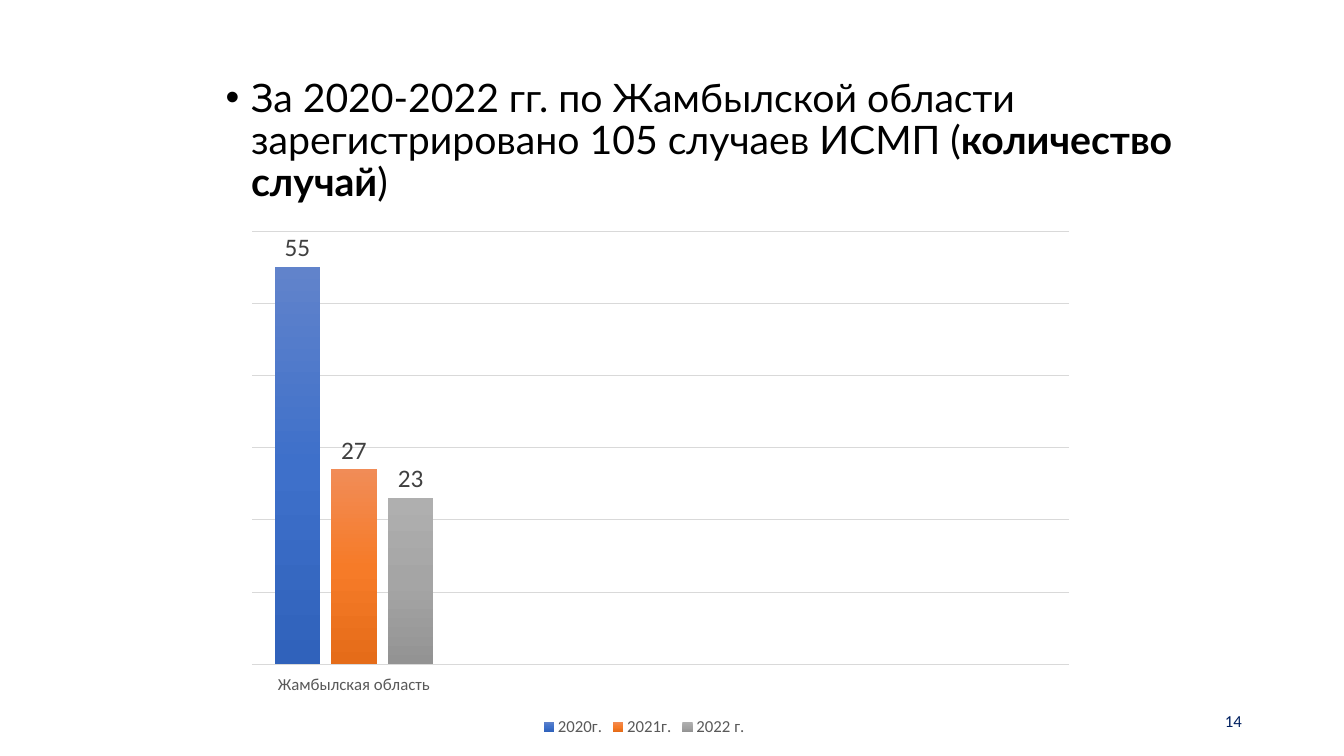
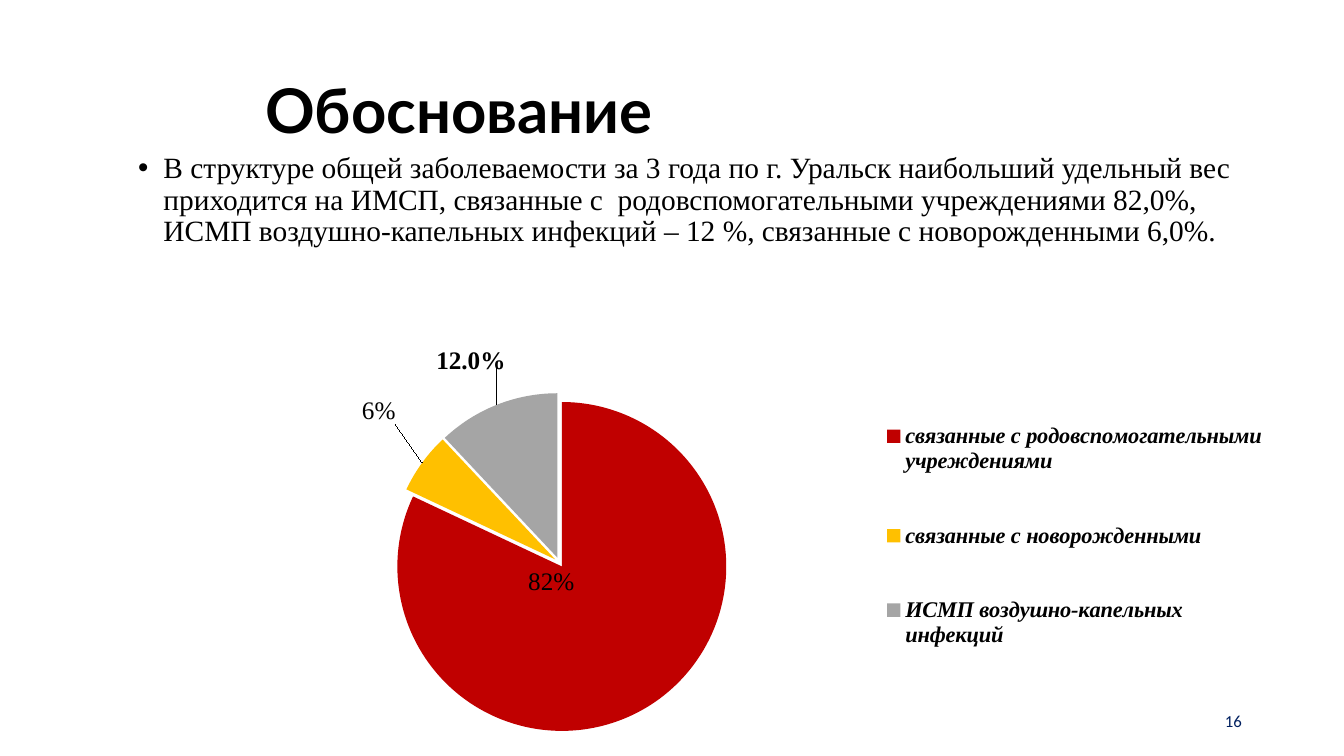
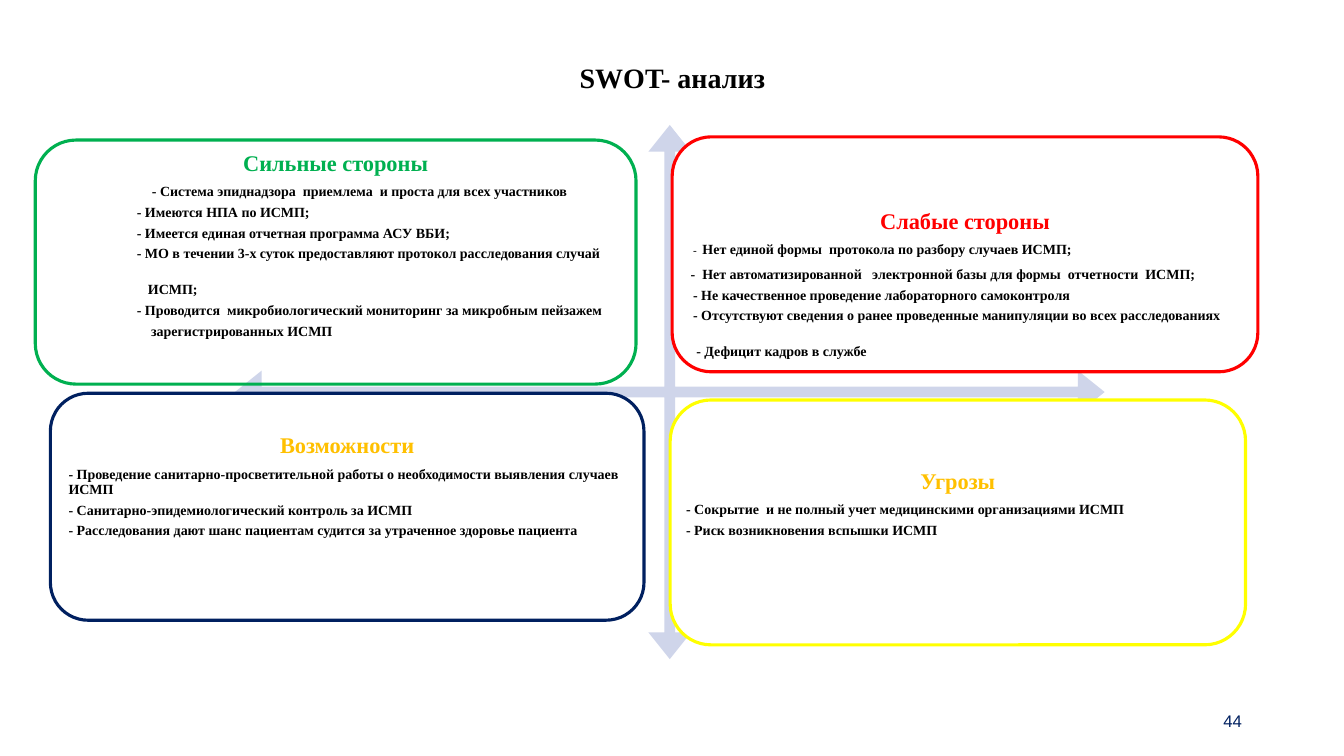
"""Build three slides on hospital infections: a column chart, a pie chart and a SWOT grid."""
from pptx import Presentation
from pptx.chart.data import CategoryChartData
from pptx.dml.color import RGBColor
from pptx.enum.chart import XL_CHART_TYPE as ChartType, XL_LABEL_POSITION as LabelPos
from pptx.enum.chart import XL_LEGEND_POSITION as LegendPos, XL_TICK_LABEL_POSITION as TickLabel
from pptx.enum.chart import XL_TICK_MARK as TickMark
from pptx.enum.shapes import MSO_SHAPE as Preset
from pptx.enum.text import MSO_ANCHOR as Anchor, PP_ALIGN as Align
from pptx.oxml import parse_xml
from pptx.oxml.ns import nsdecls, qn
from pptx.util import Cm, Pt

COLORS = {
    "black": "000000", "navy": "002060", "green": "00B050", "red": "FF0000",
    "yellow": "FFFF00", "amber": "FFC000", "crimson": "C00000", "grey": "A5A5A5",
    "white": "FFFFFF", "arrow": "CFD5EA", "grid": "D9D9D9", "axis": "595959", "label": "404040",
}
LATO, SERIF, CALIBRI, ARIAL = "Lato", "Times New Roman", "Calibri", "Arial"

CASES_TEXT = [
    ("За 2020-2022 гг. по Жамбылской области зарегистрировано 105 случаев ИСМП (", False),
    ("количество случай", True),
    (")", False),
]
REGIONS = ["Жамбылская область", "", "", ""]
YEARS = [
    ("2020г.", 55, ("6183CB", "3E70CA", "3062BB")),
    ("2021г.", 27, ("F18C57", "F67B28", "E56C19")),
    ("2022 г.", 23, ("AFAFAF", "A5A5A5", "939393")),
]

STRUCTURE_TEXT = [(
    "В структуре общей заболеваемости за 3 года по г. Уральск наибольший удельный вес "
    "приходится на ИМСП, связанные с  родовспомогательными учреждениями 82,0%, "
    "ИСМП воздушно-капельных инфекций – 12 %, связанные с новорожденными 6,0%.", False)]
SHARES = [
    ("связанные с родовспомогательными учреждениями", 0.82, "crimson", "82%",
     LabelPos.CENTER, (-0.05, -0.14)),
    ("связанные с новорожденными", 0.06, "amber", "6%", LabelPos.OUTSIDE_END, (-0.02, -0.09)),
    ("ИСМП воздушно-капельных инфекций", 0.12, "grey", None, LabelPos.OUTSIDE_END, (0.01, -0.08)),
]

LINE_GAP, WIDE_GAP = 4, 14.7
PANELS = [
    dict(title="Сильные стороны", at=(0.89, 3.53, 15.14, 6.15), line="green", ink="green",
         fill=None, side=0.18, top=0, lines=[
             ("- Система эпиднадзора  приемлема  и проста для всех участников", 2.46, LINE_GAP),
             ("- Имеются НПА по ИСМП;", 2.08, LINE_GAP),
             ("- Имеется единая отчетная программа АСУ ВБИ;", 2.08, LINE_GAP),
             ("- МО в течении 3-х суток предоставляют протокол расследования случай", 2.08, WIDE_GAP),
             ("ИСМП;", 2.36, LINE_GAP),
             ("- Проводится  микробиологический мониторинг за микробным пейзажем", 2.08, LINE_GAP),
             ("зарегистрированных ИСМП", 2.44, LINE_GAP)]),
    dict(title="Слабые стороны", at=(16.94, 3.45, 14.76, 5.92), line="red", ink="red",
         fill="white", side=0.18, top=1.55, lines=[
             ("Нет единой формы  протокола по разбору случаев ИСМП;", 0.06, 7, "-  "),
             ("-  Нет автоматизированной   электронной базы для формы  отчетности  ИСМП;", 0, LINE_GAP),
             ("- Не качественное проведение лабораторного самоконтроля", 0.06, LINE_GAP),
             ("- Отсутствуют сведения о ранее проведенные манипуляции во всех расследованиях",
              0.06, WIDE_GAP),
             ("- Дефицит кадров в службе", 0.14, LINE_GAP)]),
    dict(title="Возможности", at=(1.27, 9.91, 14.96, 5.72), line="navy", ink="amber",
         fill="white", side=0.18, top=0.76, lines=[
             ("- Проведение санитарно-просветительной работы о необходимости выявления случаев ИСМП",
              0, LINE_GAP),
             ("- Санитарно-эпидемиологический контроль за ИСМП", 0, LINE_GAP),
             ("- Расследования дают шанс пациентам судится за утраченное здоровье пациента",
              0, LINE_GAP)]),
    dict(title="Угрозы", at=(16.89, 10.08, 14.5, 6.17), line="yellow", ink="amber",
         fill="white", side=0.1, top=1.47, lines=[
             ("- Сокрытие  и не полный учет медицинскими организациями ИСМП", 0, LINE_GAP),
             ("- Риск возникновения вспышки ИСМП", 0, LINE_GAP)]),
]


def rgb(name):
    return RGBColor.from_string(COLORS[name])


def cm(lengths):
    return [Cm(length) for length in lengths]


def style_font(font, face, size, color, bold=False, italic=False):
    font.name, font.size, font.bold, font.italic = face, Pt(size), bold, italic
    font.color.rgb = rgb(color)


def add_span(para, text, face, size, color="black", bold=False):
    span = para.add_run()
    span.text = text
    style_font(span.font, face, size, color, bold)


def add_text(page, at, spans, face, size, color="black", align=Align.LEFT,
             anchor=Anchor.MIDDLE, spacing=0.9):
    box = page.shapes.add_textbox(*cm(at))
    frame = box.text_frame
    frame.word_wrap = True
    frame.vertical_anchor = anchor
    para = frame.paragraphs[0]
    para.alignment, para.line_spacing = align, spacing
    for text, bold in spans:
        add_span(para, text, face, size, color, bold)
    return para


def add_bullet_text(page, at, spans, face, size):
    para = add_text(page, at, spans, face, size, anchor=Anchor.TOP)
    para.space_before = Pt(10)
    settings = para._p.get_or_add_pPr()
    settings.set("marL", str(Cm(0.64)))
    settings.set("indent", str(Cm(-0.64)))
    settings.append(parse_xml(f'<a:buFont {nsdecls("a")} typeface="Arial"/>'))
    settings.append(parse_xml(f'<a:buChar {nsdecls("a")} char="•"/>'))


def new_page(deck, number, face=CALIBRI):
    page = deck.slides.add_slide(deck.slide_layouts[6])
    add_text(page, (23.93, 17.65, 7.62, 1.02), [(number, False)], face, 12, "navy",
             Align.RIGHT, spacing=1)
    return page


def layout_xml(x, y, width=None, height=None, inner=False):
    parts = ['<c:layoutTarget val="inner"/>'] if inner else []
    if width:
        parts.append('<c:xMode val="edge"/><c:yMode val="edge"/>')
    sizes = zip("xywh", (x, y, width, height))
    parts += [f'<c:{key} val="{value}"/>' for key, value in sizes if value is not None]
    return parse_xml(f'<c:layout {nsdecls("c")}><c:manualLayout>{"".join(parts)}'
                     '</c:manualLayout></c:layout>')


def add_chart(page, kind, at, data, plot_at, legend_at):
    chart = page.shapes.add_chart(kind, *cm(at), data).chart
    chart.has_title = False
    chart.font.name = CALIBRI
    area = chart._chartSpace.chart.plotArea
    for old in area.findall(qn("c:layout")):
        area.remove(old)
    area.insert(0, layout_xml(*plot_at, inner=True))
    chart.has_legend = True
    chart.legend.position = legend_at
    chart.legend.include_in_layout = False
    return chart


def add_cases_chart(page):
    data = CategoryChartData()
    data.categories = REGIONS
    for year, cases, _ in YEARS:
        data.add_series(year, [cases] + [None] * (len(REGIONS) - 1))
    chart = add_chart(page, ChartType.COLUMN_CLUSTERED, (5.44, 4.6, 21.59, 14.07), data,
                      (0.042, 0.087, 0.954, 0.776), LegendPos.BOTTOM)
    style_font(chart.legend.font, CALIBRI, 12, "axis")
    plot = chart.plots[0]
    plot.gap_width, plot.overlap, plot.vary_by_categories = 100, -24, False
    values, regions = chart.value_axis, chart.category_axis
    values.minimum_scale, values.maximum_scale, values.major_unit = 0, 60, 10
    values.visible = False
    values.has_major_gridlines = True
    grid = values.major_gridlines.format.line
    grid.color.rgb, grid.width = rgb("grid"), Pt(0.75)
    regions.major_tick_mark = TickMark.NONE
    regions.tick_label_position = TickLabel.LOW
    regions.format.line.color.rgb, regions.format.line.width = rgb("grid"), Pt(1)
    style_font(regions.tick_labels.font, CALIBRI, 12, "axis")
    for series, (_, _, shades) in zip(plot.series, YEARS):
        stops = "".join(f'<a:gs pos="{50000 * step}"><a:srgbClr val="{shade}"/></a:gs>'
                        for step, shade in enumerate(shades))
        series._element.get_or_add_spPr().append(parse_xml(
            f'<a:gradFill {nsdecls("a")} rotWithShape="1"><a:gsLst>{stops}</a:gsLst>'
            '<a:lin ang="5400000" scaled="0"/></a:gradFill>'))
        labels = series.data_labels
        labels.show_value, labels.position = True, LabelPos.OUTSIDE_END
        style_font(labels.font, CALIBRI, 18, "label")


def add_shares_chart(page):
    data = CategoryChartData(number_format="0.0%")
    data.categories = [share[0] for share in SHARES]
    data.add_series("Series 1", [share[1] for share in SHARES])
    chart = add_chart(page, ChartType.PIE, (4.52, 8.76, 27.51, 9.68), data,
                      (0.053, 0.118, 0.59, 0.882), LegendPos.RIGHT)
    style_font(chart.legend.font, SERIF, 16, "black", True, True)
    chart.legend._element.find(qn("c:legendPos")).addnext(layout_xml(0.64, 0.07, 0.36, 0.84))
    series = chart.plots[0].series[0]
    labels = series.data_labels
    labels.show_value = True
    labels.number_format, labels.number_format_is_linked = "0.0%", False
    style_font(labels.font, SERIF, 18, "black", True)
    for index, (_, _, color, caption, position, shift) in enumerate(SHARES):
        point = series.points[index]
        point.format.fill.solid()
        point.format.fill.fore_color.rgb = rgb(color)
        label = point.data_label
        if caption:
            add_span(label.text_frame.paragraphs[0], caption, SERIF, 18)
        else:
            style_font(label.font, SERIF, 18, "black", True)
        label.position = position
        entry = labels._element.findall(qn("c:dLbl"))[index]
        entry.find(qn("c:idx")).addnext(layout_xml(*shift))
    series._element.find(qn("c:dPt")).addprevious(
        parse_xml(f'<c:explosion {nsdecls("c")} val="3"/>'))


def add_panel(page, panel):
    shape = page.shapes.add_shape(Preset.ROUNDED_RECTANGLE, *cm(panel["at"]))
    shape.shadow.inherit = False
    if panel["fill"]:
        shape.fill.solid()
        shape.fill.fore_color.rgb = rgb(panel["fill"])
    else:
        shape.fill.background()
    shape.line.color.rgb, shape.line.width = rgb(panel["line"]), Pt(2.25)
    frame = shape.text_frame
    frame.word_wrap, frame.vertical_anchor = True, Anchor.TOP
    frame.margin_left = frame.margin_right = Cm(panel["side"])
    frame.margin_top, frame.margin_bottom = Cm(panel["top"]), 0
    heading = frame.paragraphs[0]
    heading.alignment, heading.line_spacing, heading.space_after = Align.CENTER, 0.9, Pt(6)
    add_span(heading, panel["title"], SERIF, 16, panel["ink"], True)
    for text, indent, gap, *dash in panel["lines"]:
        para = frame.add_paragraph()
        para.alignment, para.line_spacing, para.space_after = Align.LEFT, 0.9, Pt(gap)
        para._p.get_or_add_pPr().set("marL", str(Cm(indent)))
        for mark in dash:
            add_span(para, mark, SERIF, 8)
        add_span(para, text, SERIF, 10, bold=True)


def add_cross(page):
    cross = page.shapes.add_shape(Preset.QUAD_ARROW, *cm((5.92, 3.15, 21.92, 13.46)))
    cross.shadow.inherit = False
    for index, ratio in enumerate((0.02, 0.04, 0.05)):
        cross.adjustments[index] = ratio
    cross.fill.solid()
    cross.fill.fore_color.rgb = rgb("arrow")
    cross.line.fill.background()


def main():
    deck = Presentation()
    deck.slide_width, deck.slide_height = Cm(33.87), Cm(19.05)

    page = new_page(deck, "14")
    add_bullet_text(page, (5.44, 1.85, 26.11, 15.24), CASES_TEXT, LATO, 28)
    add_cases_chart(page)

    page = new_page(deck, "16")
    add_text(page, (6.43, 1.02, 25.1, 3.68), [("Обоснование", True)], LATO, 44)
    add_bullet_text(page, (3.23, 3.73, 28.3, 4.88), STRUCTURE_TEXT, SERIF, 21)
    add_shares_chart(page)

    page = new_page(deck, "44", ARIAL)
    add_text(page, (2.34, 1.02, 29.21, 1.96), [("SWOT- анализ", True)], SERIF, 20,
             align=Align.CENTER)
    add_cross(page)
    for panel in PANELS:
        add_panel(page, panel)

    deck.save("out.pptx")


if __name__ == "__main__":
    main()
